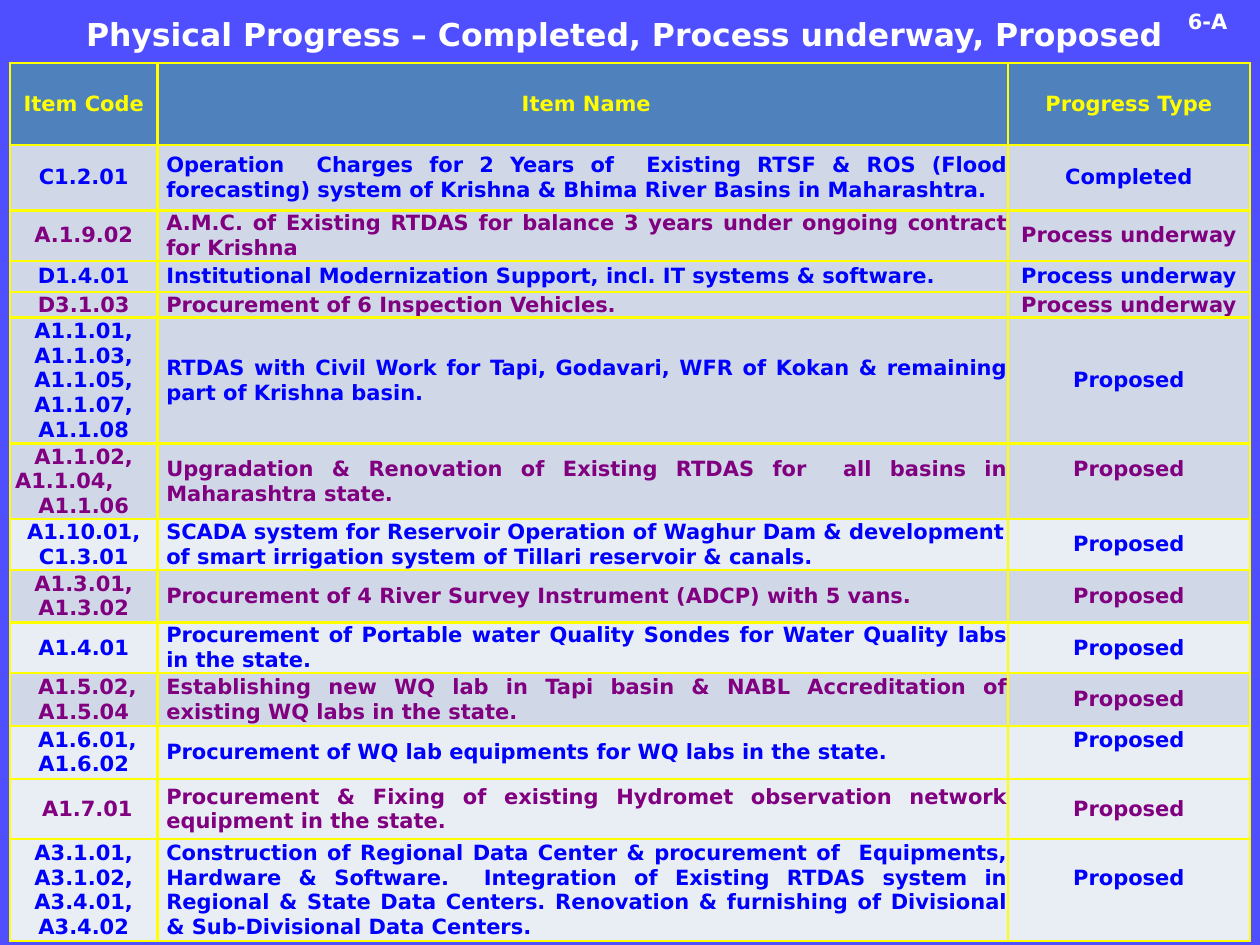
from lxml import etree
from pptx import Presentation
from pptx.dml.color import RGBColor
from pptx.enum import text as t
from pptx.oxml import ns
from pptx.util import Inches, Pt

BACKGROUND = RGBColor(0x4F, 0x4F, 0xFF)
WHITE = RGBColor(0xFF, 0xFF, 0xFF)
YELLOW = RGBColor(0xFF, 0xFF, 0x00)
BLUE = RGBColor(0x00, 0x00, 0xFF)
PURPLE = RGBColor(0x80, 0x00, 0x80)
HEADER = RGBColor(0x4F, 0x81, 0xBD)
DARK = RGBColor(0xD0, 0xD8, 0xE8)
LIGHT = RGBColor(0xE9, 0xED, 0xF4)
FONT = "DejaVu Sans"
CENTER, LEFT, JUSTIFY = t.PP_ALIGN.CENTER, t.PP_ALIGN.LEFT, t.PP_ALIGN.JUSTIFY

# Content: text, size, left, top, width, height
HEADINGS = [
    ("Physical Progress – Completed, Process underway, Proposed ", 18, 0.5, 0.09, 9, 0.35),
    ("6-A", 12, 9.17, 0.02, 0.83, 0.3),
]
COLUMNS = [("Item Code", 1.17), (" Item Name", 6.75), ("Progress Type", 1.92)]
HEADER_HEIGHT = 0.65
# Content: codes, item name, progress type, row height, fill
ITEMS = [
    ("C1.2.01", "Operation  Charges for 2 Years of  Existing RTSF & ROS (Flood forecasting) "
     "system of Krishna & Bhima River Basins in Maharashtra.", "Completed", 0.52, DARK),
    ("A.1.9.02", "A.M.C. of Existing RTDAS for balance 3 years under ongoing contract "
     "for Krishna", "Process underway", 0.4, DARK),
    ("D1.4.01", "Institutional Modernization Support, incl. IT systems & software.",
     "Process underway", 0.25, DARK),
    ("D3.1.03", "Procurement of 6 Inspection Vehicles.", "Process underway", 0.2, DARK),
    ("A1.1.01, A1.1.03, A1.1.05, A1.1.07, A1.1.08", "RTDAS with Civil Work for Tapi, "
     "Godavari, WFR of Kokan & remaining part of Krishna basin. ", "Proposed", 0.99, DARK),
    ("A1.1.02,\nA1.1.04,\nA1.1.06", "Upgradation & Renovation of Existing RTDAS for  all "
     "basins in Maharashtra state.", "Proposed", 0.6, DARK),
    ("A1.10.01, C1.3.01", "SCADA system for Reservoir Operation of Waghur Dam & development "
     "of smart irrigation system of Tillari reservoir & canals.", "Proposed", 0.4, LIGHT),
    ("A1.3.01, A1.3.02", "Procurement of 4 River Survey Instrument (ADCP) with 5 vans.",
     "Proposed", 0.42, DARK),
    ("A1.4.01", "Procurement of Portable water Quality Sondes for Water Quality labs "
     "in the state.", "Proposed", 0.4, LIGHT),
    (" A1.5.02, A1.5.04", "Establishing new WQ lab in Tapi basin & NABL Accreditation of "
     "existing WQ labs in the state.", "Proposed", 0.42, DARK),
    (" A1.6.01, A1.6.02", "Procurement of WQ lab equipments for WQ labs in the state.",
     "Proposed", 0.42, LIGHT),
    (" A1.7.01", "Procurement & Fixing of existing Hydromet observation network "
     "equipment in the state. ", "Proposed", 0.48, LIGHT),
    ("A3.1.01, A3.1.02, A3.4.01, A3.4.02", "Construction of Regional Data Center & "
     "procurement of  Equipments, Hardware & Software.  Integration of Existing RTDAS "
     "system in Regional & State Data Centers. Renovation & furnishing of Divisional & "
     "Sub-Divisional Data Centers.", "Proposed", 0.81, LIGHT),
]
LEFT_ALIGNED_NAMES = {7, 8}
RAISED_PROGRESS = {6, 11, 13}


def write(frame, words, color, size=12, align=CENTER):
    frame.text = words
    for paragraph in frame.paragraphs:
        paragraph.alignment = align
        style = {"name": FONT, "size": Pt(size), "bold": True}
        for run in paragraph.runs:
            for key, value in style.items():
                setattr(run.font, key, value)
            run.font.color.rgb = color


def indent(paragraph, inches):
    paragraph._p.get_or_add_pPr().set("marL", str(Inches(inches)))


def add_borders(cell):
    props = cell._tc.get_or_add_tcPr()
    for index, side in enumerate(("lnL", "lnR", "lnT", "lnB")):
        line = etree.Element(ns.qn(f"a:{side}"), w=str(Pt(1.5)))
        solid = etree.SubElement(line, ns.qn("a:solidFill"))
        etree.SubElement(solid, ns.qn("a:srgbClr"), val=str(YELLOW))
        props.insert(index, line)


def fill_cell(cell, words, color, fill, align=CENTER):
    layout = {"margin_left": 0, "margin_right": 0, "margin_top": 0, "margin_bottom": 0,
              "vertical_anchor": t.MSO_ANCHOR.MIDDLE}
    for key, value in layout.items():
        setattr(cell, key, value)
    write(cell.text_frame, words, color, align=align)
    cell.fill.solid()
    cell.fill.fore_color.rgb = fill
    add_borders(cell)


def main():
    deck = Presentation()
    deck.slide_width, deck.slide_height = Inches(10), Inches(7.5)
    slide = deck.slides.add_slide(deck.slide_layouts[6])
    slide.background.fill.solid()
    slide.background.fill.fore_color.rgb = BACKGROUND

    # Title and page mark
    for words, size, *place in HEADINGS:
        frame = slide.shapes.add_textbox(*map(Inches, place)).text_frame
        frame.word_wrap = True
        frame.vertical_anchor = t.MSO_ANCHOR.MIDDLE
        write(frame, words, WHITE, size)

    # Progress table
    heights = [HEADER_HEIGHT] + [item[3] for item in ITEMS]
    widths = [width for _, width in COLUMNS]
    progress = slide.shapes.add_table(
        len(heights), len(widths), Inches(0.08), Inches(0.5),
        Inches(sum(widths)), Inches(sum(heights))).table
    for row, height in zip(progress.rows, heights):
        row.height = Inches(height)
    for column, (heading, width) in enumerate(COLUMNS):
        progress.columns[column].width = Inches(width)
        fill_cell(progress.cell(0, column), heading, YELLOW, HEADER)

    # Item rows alternate blue and purple text
    for row, (codes, name, status, _, fill) in enumerate(ITEMS, start=1):
        color = BLUE if row % 2 else PURPLE
        code_cell, name_cell, status_cell = (progress.cell(row, c) for c in range(3))
        fill_cell(code_cell, codes, color, fill)
        fill_cell(name_cell, name, color, fill,
                  LEFT if row in LEFT_ALIGNED_NAMES else JUSTIFY)
        indent(name_cell.text_frame.paragraphs[0], 0.07)
        fill_cell(status_cell, status, color, fill)
        if row in RAISED_PROGRESS:
            status_cell.margin_bottom = Inches(0.19)

    # The second code of the upgradation row sits at the left
    second_code = progress.cell(6, 0).text_frame.paragraphs[1]
    second_code.alignment = LEFT
    indent(second_code, 0.04)

    deck.save("out.pptx")


if __name__ == "__main__":
    main()
